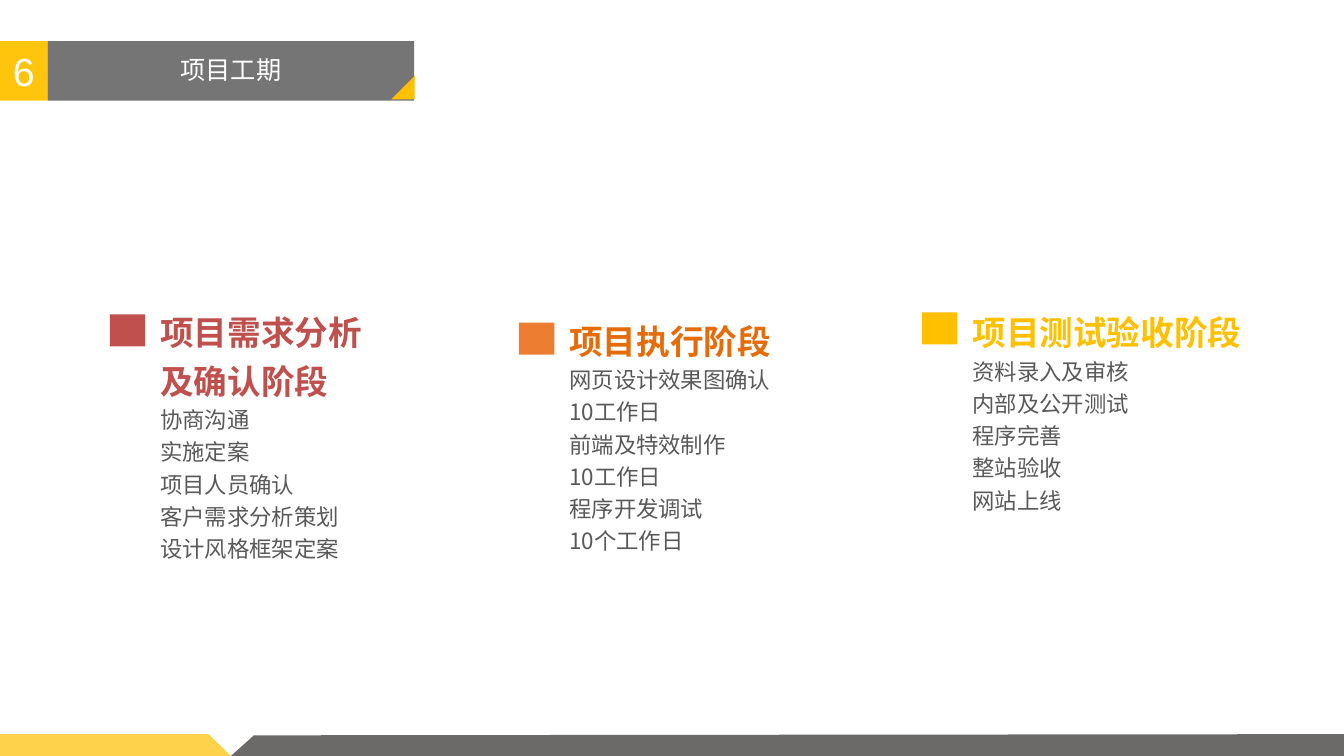
from collections import namedtuple

from lxml import etree
from pptx import Presentation
from pptx.dml.color import RGBColor
from pptx.enum.shapes import MSO_SHAPE
from pptx.enum.text import MSO_ANCHOR, MSO_AUTO_SIZE, PP_ALIGN
from pptx.oxml.ns import qn
from pptx.util import Cm, Pt

RECTANGLE = MSO_SHAPE.RECTANGLE
TRIANGLE = MSO_SHAPE.ISOSCELES_TRIANGLE
MIDDLE = MSO_ANCHOR.MIDDLE
CENTER = PP_ALIGN.CENTER
GROW = MSO_AUTO_SIZE.SHAPE_TO_FIT_TEXT

WHITE = RGBColor(0xFF, 0xFF, 0xFF)
AMBER = RGBColor(0xFF, 0xC5, 0x0D)
GOLD = RGBColor(0xFF, 0xC0, 0x00)
GRAY = RGBColor(0x75, 0x75, 0x75)
CHARCOAL = RGBColor(0x3B, 0x38, 0x38)
BODY_GRAY = RGBColor(0x59, 0x59, 0x59)
RED = RGBColor(0xC0, 0x50, 0x4D)
ORANGE = RGBColor(0xED, 0x7D, 0x31)
DARK_ORANGE = RGBColor(0xE4, 0x6C, 0x0A)

LATIN_FONT = "Arial"
CHINESE_FONT = "Noto Sans CJK SC"
PAGE_WIDTH, PAGE_HEIGHT = 33.87, 19.05

Box = namedtuple("Box", "left top width height")
Stage = namedtuple("Stage", "box marker_drop marker_color color headings items")

STAGES = [
    Stage(Box(2.77, 7.54, 12.07, 6.76), 0.38, RED, RED,
          ["项目需求分析", "及确认阶段"],
          ["协商沟通", "实施定案", "项目人员确认", "客户需求分析策划", "设计风格框架定案"]),
    Stage(Box(13.08, 7.75, 12.35, 6.4), 0.38, ORANGE, DARK_ORANGE,
          ["项目执行阶段"],
          ["网页设计效果图确认", "10工作日", "前端及特效制作", "10工作日",
           "程序开发调试", "10个工作日"]),
    Stage(Box(23.24, 7.54, 9.76, 5.54), 0.33, GOLD, GOLD,
          ["项目测试验收阶段"],
          ["资料录入及审核", "内部及公开测试", "程序完善", "整站验收", "网站上线"]),
]


def paint(shape, color):
    """Give a shape a plain fill without line or shadow."""
    shape.shadow.inherit = False
    shape.fill.solid()
    shape.fill.fore_color.rgb = color
    shape.line.fill.background()


def add_block(shapes, kind, box, color):
    """Add a plain preset shape in the given box."""
    block = shapes.add_shape(kind, *(Cm(length) for length in box))
    paint(block, color)
    return block


def style_para(para, size, font, color, bold=False):
    """Format every run of a paragraph."""
    for span in para.runs:
        span.font.size = Pt(size)
        span.font.name = font
        span.font.bold = bold
        span.font.color.rgb = color
        east_asian = etree.SubElement(span.font._element, qn("a:ea"))
        east_asian.set("typeface", font)


def add_label(shapes, box, color, text, size, font, spacing):
    """Add a filled rectangle with centred white text."""
    label = add_block(shapes, RECTANGLE, box, color)
    label.text_frame.text = text
    label.text_frame.word_wrap = True
    label.text_frame.vertical_anchor = MIDDLE
    para = label.text_frame.paragraphs[0]
    para.alignment = CENTER
    para.line_spacing = spacing
    style_para(para, size, font, WHITE)


def add_header(page, box):
    """Draw the section number, the title bar and its folded corner."""
    number_width = 1.2
    number = Box(box.left, box.top, number_width, box.height)
    title = Box(box.left + number_width, box.top, box.width - number_width, box.height)
    corner = Box(box.left + box.width - 0.56, box.top + box.height - 0.39, 0.84, 0.41)
    add_label(page.shapes, number, AMBER, "6", 28, LATIN_FONT, 1.0)
    add_label(page.shapes, title, GRAY, "项目工期", 18, CHINESE_FONT, 0.9)
    add_block(page.shapes, TRIANGLE, corner, GOLD).rotation = 135


def add_band(page, points, color, opacity):
    """Draw a translucent outline through the given points."""
    corners = [(Cm(x), Cm(y)) for x, y in points]
    builder = page.shapes.build_freeform(*corners[0])
    builder.add_line_segments(corners[1:])
    band = builder.convert_to_shape()
    paint(band, color)
    tint = band._element.spPr.find(qn("a:solidFill"))[0]
    etree.SubElement(tint, qn("a:alpha")).set("val", str(opacity * 1000))


def add_footer(page, box):
    """Draw the two slanted bands along the foot of the page."""
    right, bottom = box.left + box.width, box.top + box.height
    joint = box.left + 5.82
    add_band(page, [(box.left, box.top), (joint - 0.56, box.top),
                    (joint, bottom), (box.left, bottom)], GOLD, 70)
    add_band(page, [(joint, bottom), (joint + 0.58, box.top + 0.03),
                    (right, box.top), (right, bottom)], CHARCOAL, 75)


def add_stage(page, stage):
    """Draw one project stage: marker, heading and items."""
    box = stage.box
    group = page.shapes.add_group_shape()
    marker = Box(box.left, box.top + stage.marker_drop, 0.89, 0.81)
    add_block(group.shapes, RECTANGLE, marker, stage.marker_color)
    indent = 1.02
    textbox = group.shapes.add_textbox(
        Cm(box.left + indent), Cm(box.top), Cm(box.width - indent), Cm(box.height))
    frame = textbox.text_frame
    frame.text = "\n".join(stage.headings + stage.items)
    frame.word_wrap = True
    frame.auto_size = GROW
    for index, para in enumerate(frame.paragraphs):
        para.line_spacing = 1.2
        if index < len(stage.headings):
            style_para(para, 24, CHINESE_FONT, stage.color, bold=True)
        else:
            style_para(para, 16, CHINESE_FONT, BODY_GRAY)


def main():
    """Build the project schedule slide and save it."""
    deck = Presentation()
    deck.slide_width, deck.slide_height = Cm(PAGE_WIDTH), Cm(PAGE_HEIGHT)
    page = deck.slides.add_slide(deck.slide_layouts[6])
    add_header(page, Box(0, 1.04, 10.44, 1.5))
    add_footer(page, Box(0, PAGE_HEIGHT - 0.55, PAGE_WIDTH, 0.55))
    for stage in STAGES:
        add_stage(page, stage)
    deck.save("out.pptx")


if __name__ == "__main__":
    main()
